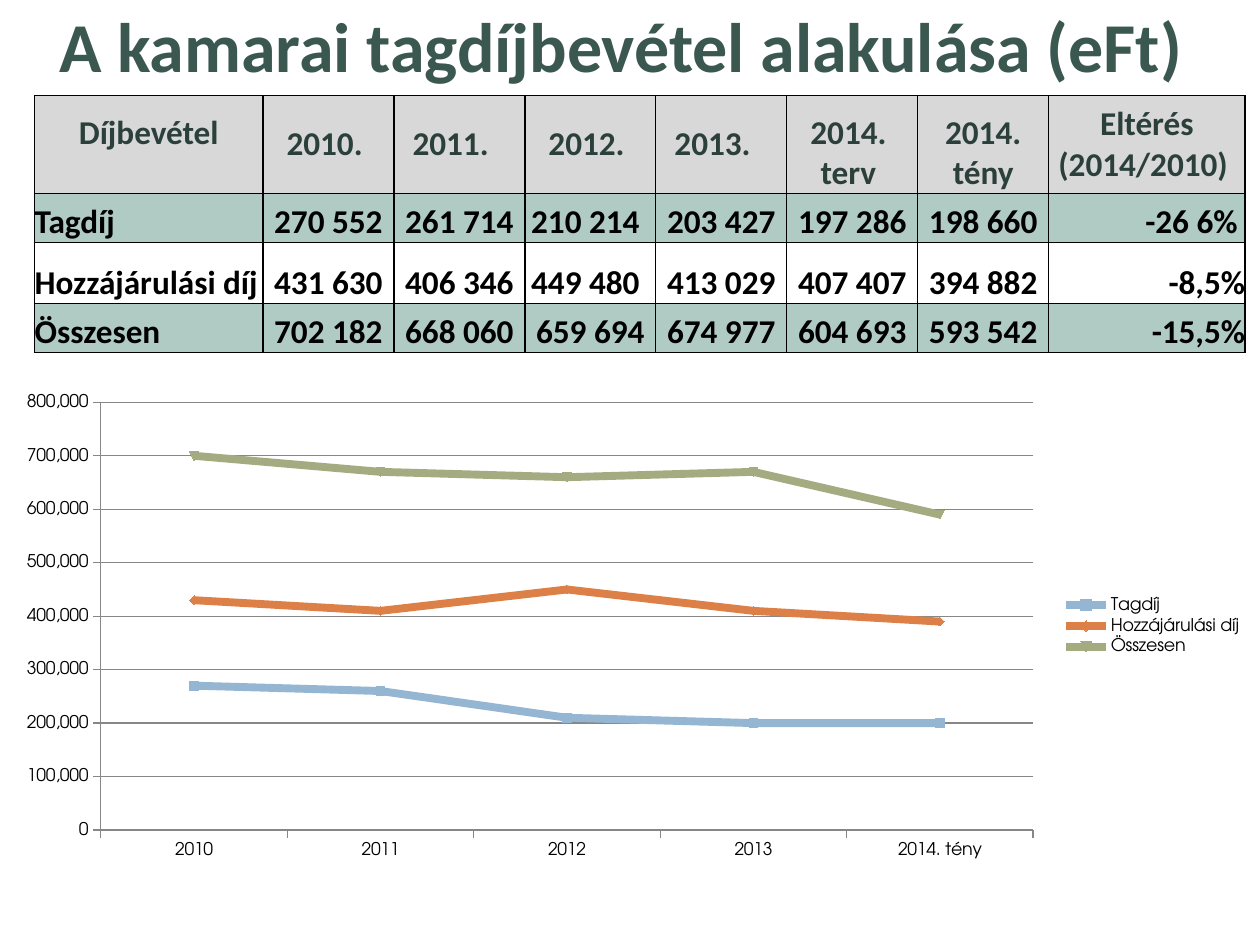
from lxml import etree
from pptx import Presentation
from pptx.chart.data import CategoryChartData
from pptx.dml.color import RGBColor
from pptx.enum.chart import XL_CHART_TYPE, XL_LEGEND_POSITION, XL_MARKER_STYLE, XL_TICK_MARK
from pptx.enum.text import MSO_ANCHOR, PP_ALIGN
from pptx.oxml import parse_xml
from pptx.oxml.ns import nsdecls, qn
from pptx.util import Cm, Pt

LEFT, CENTER, RIGHT = PP_ALIGN.LEFT, PP_ALIGN.CENTER, PP_ALIGN.RIGHT
TOP, MIDDLE, BOTTOM = MSO_ANCHOR.TOP, MSO_ANCHOR.MIDDLE, MSO_ANCHOR.BOTTOM
LINE_MARKERS = XL_CHART_TYPE.LINE_MARKERS
LEGEND_RIGHT = XL_LEGEND_POSITION.RIGHT
TICK_OUT = XL_TICK_MARK.OUTSIDE
AUTO_MARKER = XL_MARKER_STYLE.AUTOMATIC
COLORS = {
    "title": "3A5750", "header_text": "2C403B", "header": "D8D8D8", "band": "B0CAC4",
    "black": "000000", "grid": "878787", "blue": "94B6D2", "orange": "DD8047", "olive": "A5AB81",
}
TEXT_FONT, CHART_FONT = "Calibri", "TeX Gyre Adventor"


def color(name):
    return RGBColor.from_string(COLORS[name])


def add_run(para, text, size, color_name):
    span = para.add_run()
    span.text = text
    span.font.name = TEXT_FONT
    span.font.size = Pt(size)
    span.font.bold = True
    span.font.color.rgb = color(color_name)


deck = Presentation()
deck.slide_width, deck.slide_height = Cm(25.4), Cm(19.05)
page = deck.slides.add_slide(deck.slide_layouts[5])

title = page.shapes.title
title.left, title.top, title.width, title.height = Cm(0.51), Cm(-0.08), Cm(24.41), Cm(2.34)
title.text_frame.vertical_anchor = TOP
title.text_frame.margin_right = Cm(0.66)
title_para = title.text_frame.paragraphs[0]
title_para.alignment = CENTER
add_run(title_para, "A kamarai tagdíjbevétel alakulása (eFt)", 40, "title")

headers = ["Díjbevétel", "2010. ", "2011. ", "2012. ", "2013. ", "2014. \nterv ", "2014. tény",
           "Eltérés (2014/2010) "]
fees = [
    ["Tagdíj", "270 552", "261 714", "210 214", "203 427", "197 286", "198 660", "-26 6% "],
    ["Hozzájárulási díj", "431 630", "406 346", "449 480", "413 029", "407 407", "394 882", "-8,5%"],
    ["Összesen", "702 182", "668 060", "659 694", "674 977", "604 693", "593 542", "-15,5%"],
]
column_widths = [4.6] + [2.64] * 6 + [3.96]
row_heights = [1.97, 0.99, 1.23, 0.99]
right_margins = {(0, 2): 0.2, (0, 4): 0.2, (1, 3): 0.2, (2, 3): 0.2}

table_frame = page.shapes.add_table(4, 8, Cm(0.7), Cm(1.93), Cm(sum(column_widths)), Cm(sum(row_heights)))
table = table_frame.table
table.horz_banding = False
table.first_row = False
for column, width in zip(table.columns, column_widths):
    column.width = Cm(width)
for row, height in zip(table.rows, row_heights):
    row.height = Cm(height)

for row_index, texts in enumerate([headers] + fees):
    for column_index, text in enumerate(texts):
        cell = table.cell(row_index, column_index)
        cell.margin_left = cell.margin_top = cell.margin_bottom = 0
        cell.margin_right = Cm(right_margins.get((row_index, column_index), 0))
        is_header = row_index == 0
        cell.vertical_anchor = MIDDLE if is_header and column_index in (1, 2, 3, 4, 7) else BOTTOM
        if is_header and column_index == 0:
            cell.margin_bottom = Cm(0.8)
        if is_header:
            alignment = CENTER
        else:
            alignment = {0: LEFT, 7: RIGHT}.get(column_index, CENTER)
        for line_index, line in enumerate(text.split("\n")):
            frame = cell.text_frame
            para = frame.add_paragraph() if line_index else frame.paragraphs[0]
            para.alignment = alignment
            add_run(para, line, 19, "header_text" if is_header else "black")
        properties = cell._tc.get_or_add_tcPr()
        for side in ("lnL", "lnR", "lnT", "lnB"):
            properties.append(parse_xml(
                f'<a:{side} {nsdecls("a")} w="12700"><a:solidFill>'
                f'<a:srgbClr val="{COLORS["black"]}"/></a:solidFill></a:{side}>'))
        if row_index == 2:
            cell.fill.background()
        else:
            cell.fill.solid()
            cell.fill.fore_color.rgb = color("header" if is_header else "band")

chart_data = CategoryChartData(number_format="#,##0")
chart_data.categories = ["2010", "2011", "2012", "2013", "2014. tény"]
for name, *amounts in fees:
    actuals = amounts[:4] + [amounts[5]]
    chart_data.add_series(f"{name} ", [round(int(amount.replace(" ", "")), -4) for amount in actuals])

chart = page.shapes.add_chart(LINE_MARKERS, 0, Cm(7.72), Cm(25.4), Cm(9.8), chart_data).chart
chart.has_title = False
chart.font.name = CHART_FONT
chart.font.size = Pt(10)
chart.font.color.rgb = color("black")
chart.has_legend = True
chart.legend.position = LEGEND_RIGHT
chart.legend.include_in_layout = False
chart.plots[0].vary_by_categories = False

value_axis = chart.value_axis
value_axis.minimum_scale, value_axis.maximum_scale, value_axis.major_unit = 0, 800000, 100000
value_axis.has_major_gridlines = True
value_axis.tick_labels.number_format = "#,##0"
value_axis.tick_labels.number_format_is_linked = False
for axis in (value_axis, chart.category_axis):
    axis.major_tick_mark = TICK_OUT
for item in (value_axis, chart.category_axis, value_axis.major_gridlines):
    item.format.line.color.rgb = color("grid")
    item.format.line.width = Pt(0.75)

for series, color_name in zip(chart.plots[0].series, ("blue", "orange", "olive")):
    series.smooth = False
    series.format.line.color.rgb = color(color_name)
    series.format.line.width = Pt(4.5)
    series.marker.style = AUTO_MARKER
    series.marker.size = 5
    series.marker.format.fill.solid()
    series.marker.format.fill.fore_color.rgb = color(color_name)
    series.marker.format.line.color.rgb = color(color_name)

plot_area = chart._chartSpace.chart.plotArea
for old_layout in plot_area.findall(qn("c:layout")):
    plot_area.remove(old_layout)
layout = etree.Element(qn("c:layout"))
manual = etree.SubElement(layout, qn("c:manualLayout"))
for tag, value in [("layoutTarget", "inner"), ("xMode", "edge"), ("yMode", "edge"),
                   ("x", "0.08"), ("y", "0.04"), ("w", "0.74"), ("h", "0.88")]:
    etree.SubElement(manual, qn(f"c:{tag}")).set("val", value)
plot_area.insert(0, layout)

deck.save("out.pptx")
